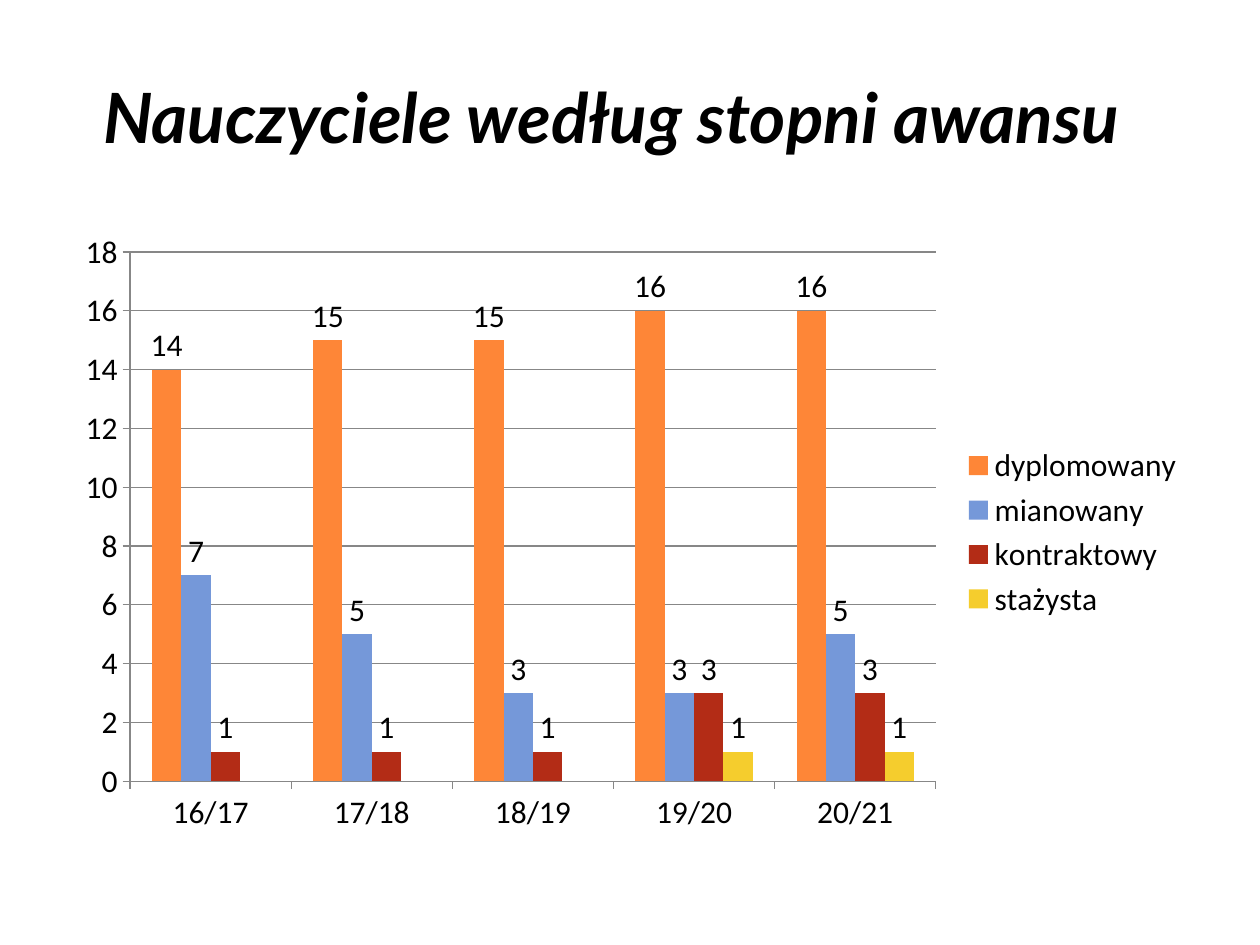
from pptx import Presentation
from pptx.chart.data import CategoryChartData
from pptx.dml.color import RGBColor
from pptx.enum.chart import XL_CHART_TYPE, XL_LABEL_POSITION, XL_LEGEND_POSITION, XL_TICK_MARK
from pptx.enum.text import MSO_ANCHOR, PP_ALIGN
from pptx.util import Pt

COLUMNS = XL_CHART_TYPE.COLUMN_CLUSTERED
ABOVE_BAR = XL_LABEL_POSITION.OUTSIDE_END
RIGHT = XL_LEGEND_POSITION.RIGHT
TICK = XL_TICK_MARK.OUTSIDE
MIDDLE = MSO_ANCHOR.MIDDLE
CENTER = PP_ALIGN.CENTER

BLACK = "000000"
GREY = "878787"
TITLE_FORMAT = {"name": "Lato", "size": Pt(39.6), "bold": True, "italic": True}
CHART_FORMAT = {"name": "Calibri", "size": Pt(18), "bold": False}
YEARS = ["16/17", "17/18", "18/19", "19/20", "20/21"]
RANKS = [
    ("dyplomowany", [14, 15, 15, 16, 16], "FE8637"),
    ("mianowany", [7, 5, 3, 3, 5], "7598D9"),
    ("kontraktowy", [1, 1, 1, 3, 3], "B32C16"),
    ("stażysta", [None, None, None, 1, 1], "F5CD2D"),
]


def paint(color_format, color):
    """Set a colour from a hex string."""
    color_format.rgb = RGBColor.from_string(color)


def format_font(font, values):
    """Apply format values to a font and make it black."""
    for name, value in values.items():
        setattr(font, name, value)
    paint(font.color, BLACK)


def draw_line(line, color):
    """Give a line its colour and the common thin width."""
    paint(line.color, color)
    line.width = Pt(0.75)


def fill_title(title, text):
    """Place the title and write its text."""
    place = {"left": Pt(25.2), "top": Pt(20.9), "width": Pt(648), "height": Pt(90)}
    for name, value in place.items():
        setattr(title, name, value)
    frame = title.text_frame
    frame.vertical_anchor = MIDDLE
    para = frame.paragraphs[0]
    para.alignment = CENTER
    span = para.add_run()
    span.text = text
    format_font(span.font, TITLE_FORMAT)


def format_axis(axis):
    """Set the ticks and line of an axis."""
    axis.major_tick_mark = TICK
    draw_line(axis.format.line, GREY)


def format_series(series, color):
    """Colour a series and show its values above the bars."""
    series.format.fill.solid()
    paint(series.format.fill.fore_color, color)
    series.invert_if_negative = False
    labels = series.data_labels
    labels.show_value = True
    labels.position = ABOVE_BAR
    format_font(labels.font, CHART_FORMAT)


def add_rank_chart(page):
    """Add the column chart of teachers by rank and year."""
    chart_data = CategoryChartData()
    chart_data.categories = YEARS
    for name, counts, _ in RANKS:
        chart_data.add_series(name, counts)
    chart = page.shapes.add_chart(
        COLUMNS, Pt(36), Pt(126), Pt(648), Pt(356.4), chart_data
    ).chart
    format_font(chart.font, CHART_FORMAT)
    chart.has_title = False
    chart.has_legend = True
    chart.legend.position = RIGHT
    chart.legend.include_in_layout = False
    for axis in (chart.category_axis, chart.value_axis):
        format_axis(axis)
    draw_line(chart.value_axis.major_gridlines.format.line, GREY)
    plot = chart.plots[0]
    plot.gap_width = 150
    plot.overlap = 0
    plot.vary_by_categories = False
    for series, (_, _, color) in zip(plot.series, RANKS):
        format_series(series, color)


def main():
    """Build and save the slide."""
    deck = Presentation()
    deck.slide_width, deck.slide_height = Pt(720), Pt(540)
    page = deck.slides.add_slide(deck.slide_layouts.get_by_name("Title Only"))
    fill_title(page.shapes.title, "Nauczyciele według stopni awansu")
    add_rank_chart(page)
    deck.save("out.pptx")


if __name__ == "__main__":
    main()
